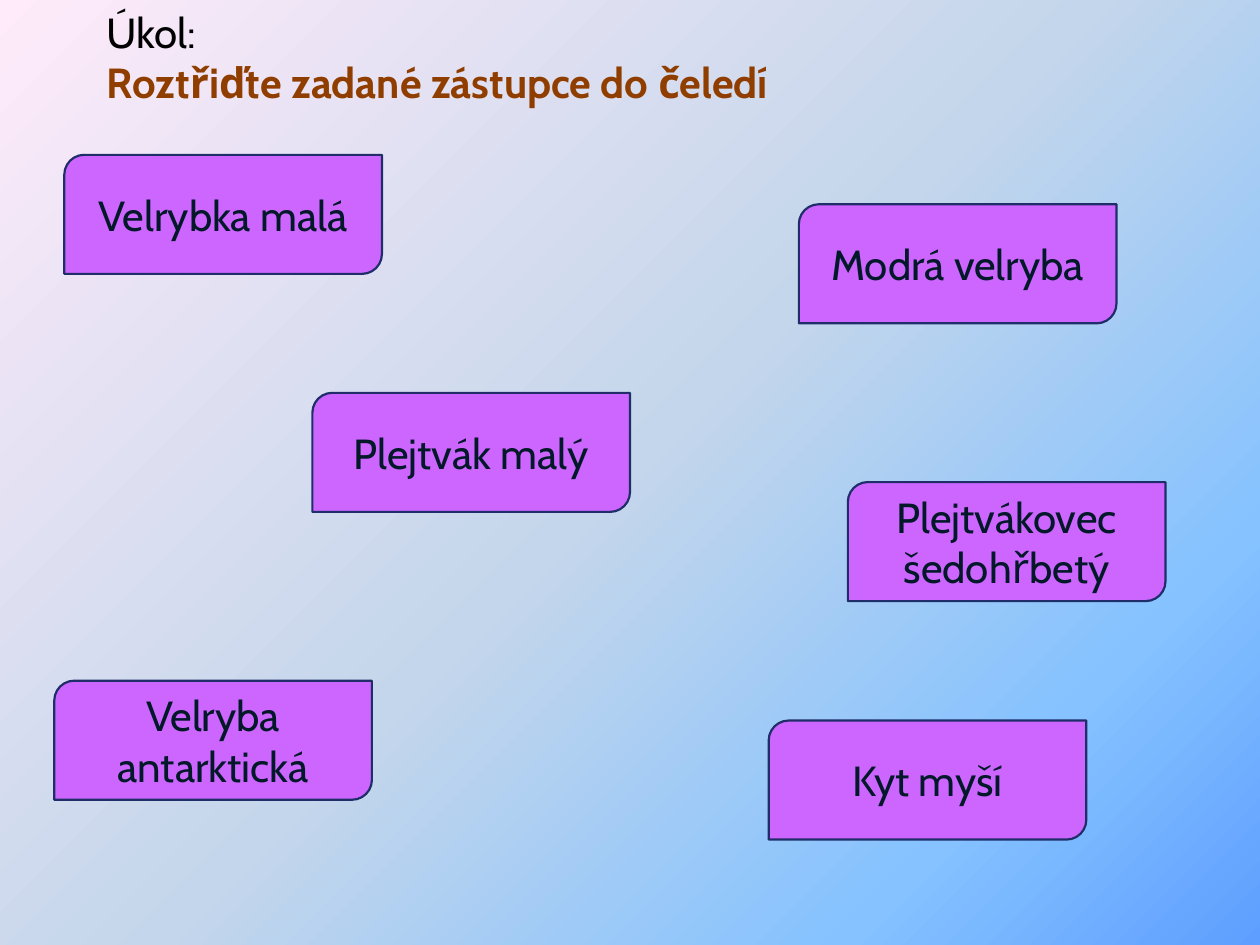
from pptx import Presentation
from pptx.dml.color import RGBColor
from pptx.enum.shapes import MSO_SHAPE
from pptx.enum.text import MSO_ANCHOR, PP_ALIGN
from pptx.oxml import parse_xml
from pptx.oxml.ns import nsdecls
from pptx.util import Pt

CARD = MSO_SHAPE.ROUND_2_DIAG_RECTANGLE
MIDDLE = MSO_ANCHOR.MIDDLE
LEFT, CENTER = PP_ALIGN.LEFT, PP_ALIGN.CENTER

FONT = "Cabin"
CARD_W, CARD_H = 181.5, 68
# Gradient stops: position in percent, colour
SKY = [(0, "5E9EFF"), (19, "85C2FF"), (50, "C4D6EB"), (100, "FFEBFA")]
# Species cards: name, left, top
SPECIES = [
    ("Velrybka malá", 36.75, 88.5),
    ("Plejtvák malý", 178.5, 224.5),
    ("Velryba antarktická", 31, 389),
    ("Kyt myší", 439.25, 411.75),
    ("Modrá velryba", 456.5, 116.75),
    ("Plejtvákovec šedohřbetý", 484.5, 275.5),
]


def color(value):
    return RGBColor.from_string(value)


def write(p, text, size=24, fill="000000", bold=False, align=LEFT):
    p.alignment = align
    r = p.add_run()
    r.text = text
    r.font.name = FONT
    r.font.size = Pt(size)
    r.font.bold = bold
    r.font.color.rgb = color(fill)


def add_background(s, stops):
    """Gradient spreading from the bottom right corner."""
    gs = "".join(f'<a:gs pos="{pos * 1000}"><a:srgbClr val="{value}"/></a:gs>'
                 for pos, value in stops)
    s.element.cSld.insert(0, parse_xml(
        f'<p:bg {nsdecls("p", "a")}><p:bgPr><a:gradFill rotWithShape="1">'
        f'<a:gsLst>{gs}</a:gsLst><a:path path="circle">'
        '<a:fillToRect l="100000" t="100000"/></a:path></a:gradFill>'
        '<a:effectLst/></p:bgPr></p:bg>'))


def add_task(s, x, y, w, h):
    tf = s.shapes.add_textbox(Pt(x), Pt(y), Pt(w), Pt(h)).text_frame
    tf.word_wrap = True
    write(tf.paragraphs[0], "Úkol:")
    write(tf.add_paragraph(), "Roztřiďte zadané zástupce do čeledí",
          fill="903E00", bold=True)


def add_card(s, name, x, y, w, h):
    sp = s.shapes.add_shape(CARD, Pt(x), Pt(y), Pt(w), Pt(h))
    sp.shadow.inherit = False
    sp.fill.solid()
    sp.fill.fore_color.rgb = color("CC66FF")
    sp.line.color.rgb = color("1F2E69")
    sp.line.width = Pt(1.25)
    tf = sp.text_frame
    tf.word_wrap = True
    tf.vertical_anchor = MIDDLE
    write(tf.paragraphs[0], name, fill="031828", align=CENTER)


def main():
    prs = Presentation()
    prs.slide_width, prs.slide_height = Pt(720), Pt(540)
    s = prs.slides.add_slide(prs.slide_layouts[6])
    add_background(s, SKY)
    # Task heading
    add_task(s, 54, 0, 430.5, 104.5)
    # Species to sort
    for name, x, y in SPECIES:
        add_card(s, name, x, y, CARD_W, CARD_H)
    prs.save("out.pptx")


if __name__ == "__main__":
    main()
